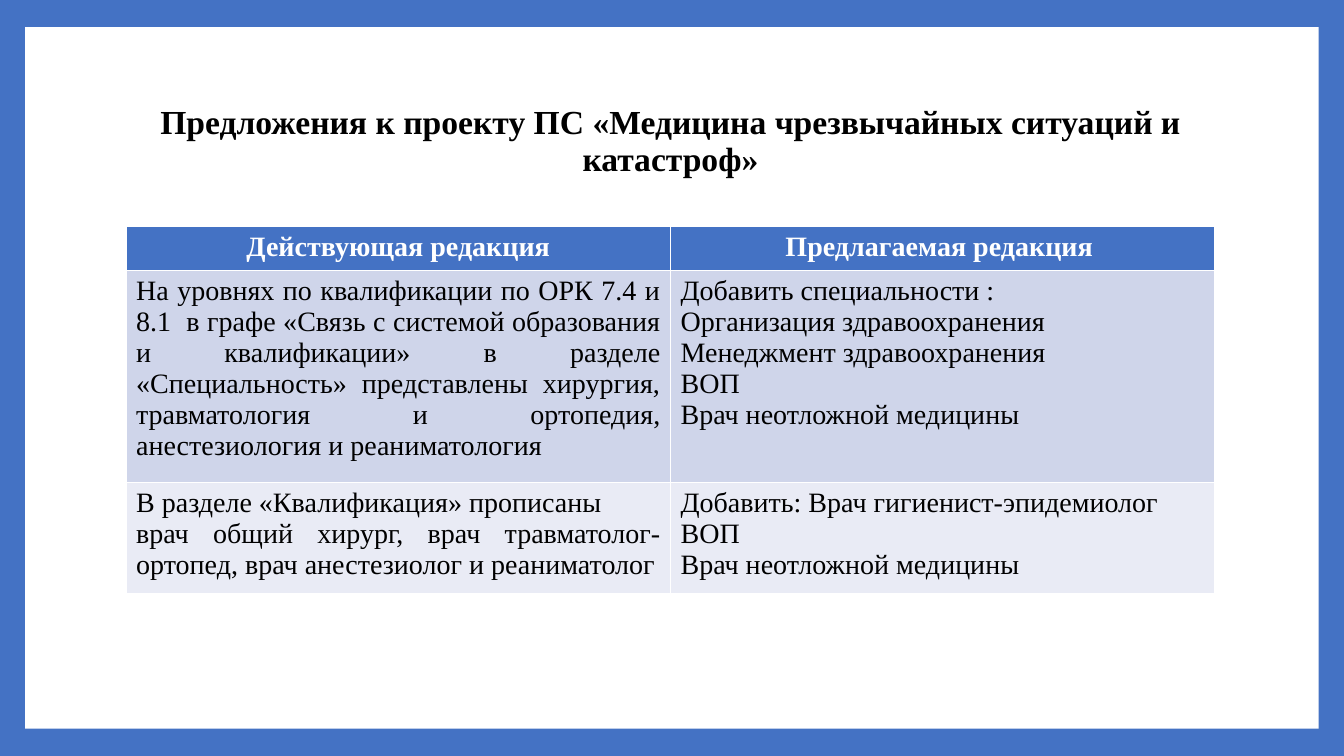
from pptx import Presentation
from pptx.dml.color import RGBColor
from pptx.enum.shapes import MSO_SHAPE
from pptx.enum.text import MSO_ANCHOR, PP_ALIGN
from pptx.util import Inches, Pt

# Content
TITLE = "Предложения к проекту ПС «Медицина чрезвычайных ситуаций и катастроф»"
ROWS = [
    (["Действующая редакция"], ["Предлагаемая редакция "]),
    (
        ["На уровнях по квалификации по ОРК 7.4 и 8.1  в графе «Связь с системой "
         "образования и квалификации» в разделе «Специальность» представлены хирургия, "
         "травматология и ортопедия, анестезиология и реаниматология"],
        ["Добавить специальности :", "Организация здравоохранения",
         "Менеджмент здравоохранения", "ВОП", "Врач неотложной медицины"],
    ),
    (
        ["В разделе «Квалификация» прописаны",
         "врач общий хирург, врач травматолог-ортопед, "
         "врач анестезиолог и реаниматолог"],
        ["Добавить: Врач гигиенист-эпидемиолог", "ВОП", "Врач неотложной медицины "],
    ),
]

# Style
FONT = "Times New Roman"
BLUE = RGBColor(0x44, 0x72, 0xC4)
WHITE = RGBColor(0xFF, 0xFF, 0xFF)
BLACK = RGBColor(0x00, 0x00, 0x00)
ROW_FILLS = [BLUE, RGBColor(0xCF, 0xD5, 0xEA), RGBColor(0xE9, 0xEB, 0xF5)]
RECTANGLE = MSO_SHAPE.RECTANGLE
MIDDLE = MSO_ANCHOR.MIDDLE
CENTER, JUSTIFY = PP_ALIGN.CENTER, PP_ALIGN.JUSTIFY

# Layout in inches
WIDTH, HEIGHT = 13.33, 7.5
FRAME_X, FRAME_Y = 0.25, 0.27
CONTENT_LEFT, CONTENT_WIDTH = 1.25, 10.8
TITLE_TOP, TITLE_HEIGHT = 0.67, 1.48
TABLE_TOP = 2.25
ROW_HEIGHTS = [0.41, 1.95, 1.02]


def style_paragraph(paragraph, text, size, color, bold, alignment):
    paragraph.text = text
    paragraph.alignment = alignment
    paragraph.font.name = FONT
    paragraph.font.size = Pt(size)
    paragraph.font.bold = bold
    paragraph.font.color.rgb = color


presentation = Presentation()
presentation.slide_width, presentation.slide_height = Inches(WIDTH), Inches(HEIGHT)
slide = presentation.slides.add_slide(presentation.slide_layouts[6])

# Blue background with a white panel
slide.background.fill.solid()
slide.background.fill.fore_color.rgb = BLUE
panel = slide.shapes.add_shape(
    RECTANGLE, Inches(FRAME_X), Inches(FRAME_Y),
    Inches(WIDTH - 2 * FRAME_X), Inches(HEIGHT - 2 * FRAME_Y))
panel.shadow.inherit = False
panel.fill.solid()
panel.fill.fore_color.rgb = WHITE
panel.line.fill.background()

# Title
title = slide.shapes.add_textbox(
    Inches(CONTENT_LEFT), Inches(TITLE_TOP), Inches(CONTENT_WIDTH), Inches(TITLE_HEIGHT))
title.text_frame.word_wrap = True
title.text_frame.vertical_anchor = MIDDLE
heading = title.text_frame.paragraphs[0]
style_paragraph(heading, TITLE, 24, BLACK, True, CENTER)
heading.line_spacing = 0.9

# Comparison table; its default style draws the white borders
table = slide.shapes.add_table(
    len(ROWS), len(ROWS[0]), Inches(CONTENT_LEFT), Inches(TABLE_TOP),
    Inches(CONTENT_WIDTH), Inches(sum(ROW_HEIGHTS))).table
for row_index, (row, height, fill) in enumerate(zip(ROWS, ROW_HEIGHTS, ROW_FILLS)):
    table.rows[row_index].height = Inches(height)
    is_header = row_index == 0
    color, alignment = (WHITE, CENTER) if is_header else (BLACK, JUSTIFY)
    for column_index, lines in enumerate(row):
        cell = table.cell(row_index, column_index)
        cell.fill.solid()
        cell.fill.fore_color.rgb = fill
        cell.text = "\n".join(lines)
        for paragraph, line in zip(cell.text_frame.paragraphs, lines):
            style_paragraph(paragraph, line, 20, color, is_header, alignment)

presentation.save("out.pptx")
